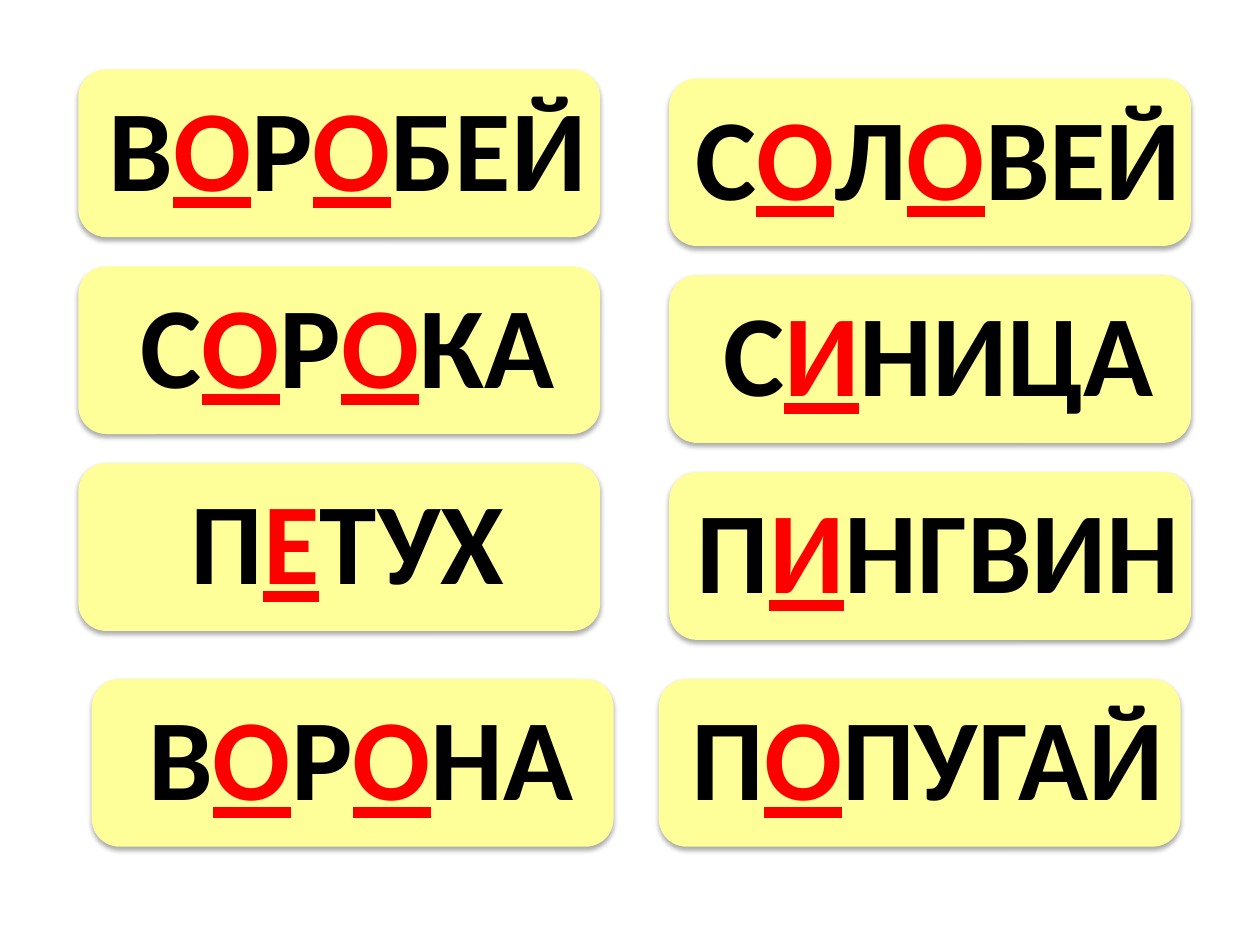
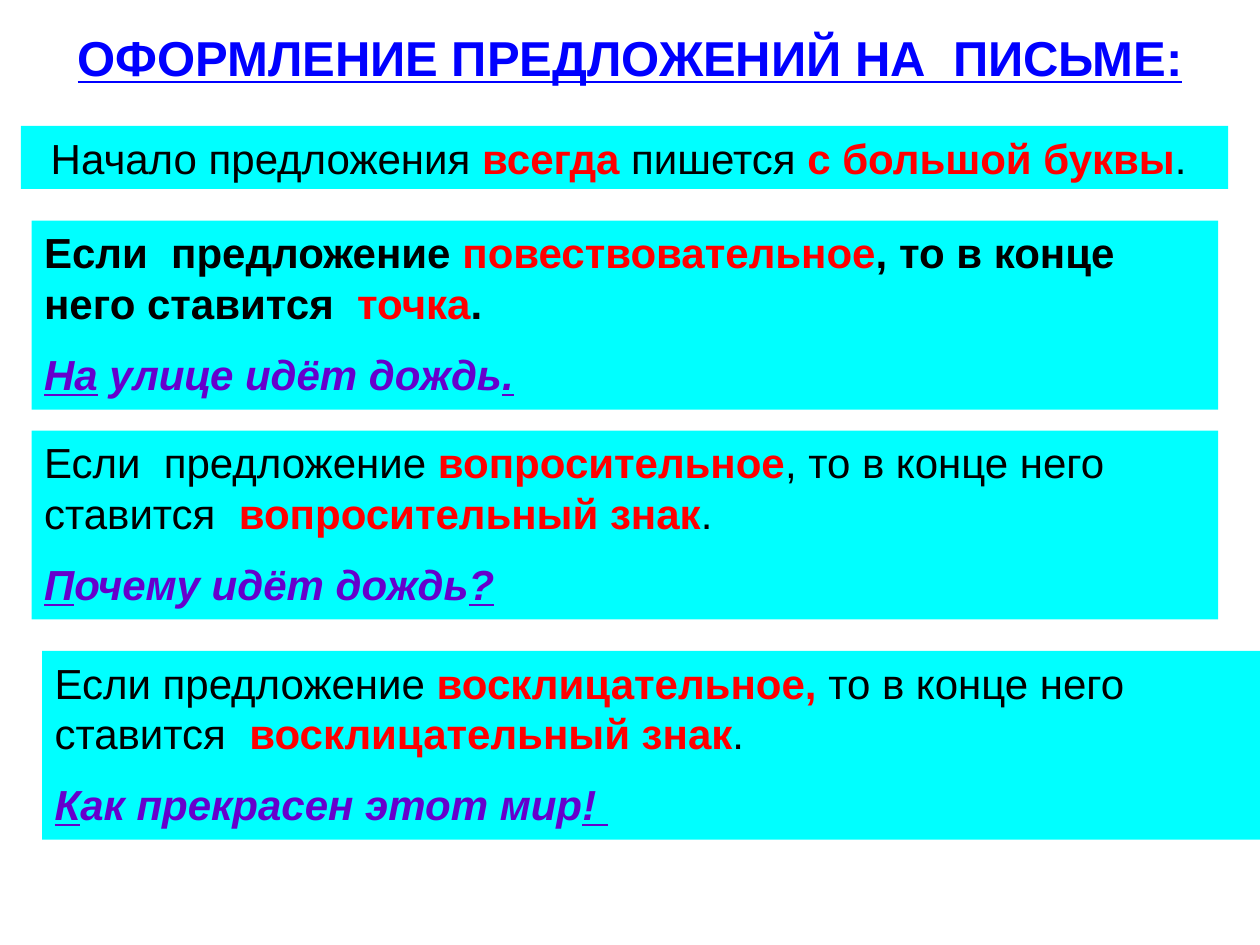
from dataclasses import dataclass, field
from typing import Any

from lxml.etree import SubElement
from pptx import Presentation
from pptx.dml.color import RGBColor
from pptx.enum.shapes import MSO_SHAPE
from pptx.enum.text import MSO_ANCHOR, MSO_AUTO_SIZE, PP_ALIGN
from pptx.oxml.ns import qn
from pptx.util import Cm, Pt


# Colours, fonts, sizes and run styles
def style(color: str, **more: Any) -> dict[str, Any]:
    return {"color": color, "bold": False, **more}


@dataclass(frozen=True)
class Theme:
    card: str = "FFFF99"
    band: str = "00FFFF"
    word_font: str = "Calibri"
    rule_font: str = "Arial"
    word_size: int = 66
    title_size: int = 28
    rule_size: int = 24
    styles: dict[str, dict[str, Any]] = field(default_factory=lambda: {
        "plain": style("000000"),
        "bold": style("000000", bold=True),
        "key": style("FF0000", bold=True),
        "vowel": style("FF0000", bold=True, underline=True),
        "mark": style("6600CC", bold=True, italic=True, underline=True),
        "sample": style("6600CC", bold=True, italic=True),
        "title": style("0000FF", bold=True, underline=True),
    })


THEME = Theme()
Line = list[tuple[str, str]]


@dataclass(frozen=True)
class Box:
    left: float
    top: float
    width: float
    height: float

    def place(self) -> tuple[Cm, Cm, Cm, Cm]:
        return Cm(self.left), Cm(self.top), Cm(self.width), Cm(self.height)


@dataclass(frozen=True)
class Card:
    left: float
    top: float
    word: str  # stressed-over vowels stand between asterisks


@dataclass(frozen=True)
class Rule:
    box: Box
    lines: list[Line]
    align: PP_ALIGN = PP_ALIGN.LEFT


# Word cards: two columns of three, and a last row set apart
COLUMNS = [
    (1.58, 1.4, ["В*О*Р*О*БЕЙ", "С*О*Р*О*КА", "П*Е*ТУХ"]),
    (13.49, 1.58, ["С*О*Л*О*ВЕЙ", "С*И*НИЦА", "П*И*НГВИН"]),
]
PITCH = 3.97
CARDS = [Card(left, top + row * PITCH, word)
         for left, top, words in COLUMNS for row, word in enumerate(words)]
CARDS += [Card(1.85, 13.69, "В*О*Р*О*НА"), Card(13.28, 13.69, "П*О*ПУГАЙ")]

# Sentence rules
TITLE = "ОФОРМЛЕНИЕ ПРЕДЛОЖЕНИЙ НА  ПИСЬМЕ:"
RULES = [
    Rule(Box(0.42, 2.54, 24.34, 1.27), [
        [("Начало предложения ", "plain"), ("всегда", "key"),
         (" пишется ", "plain"), ("с большой буквы", "key"), (". ", "plain")],
    ], PP_ALIGN.CENTER),
    Rule(Box(0.64, 4.45, 23.92, 3.81), [
        [("Если  предложение ", "bold"), ("повествовательное", "key"),
         (", то в конце него ставится  ", "bold"), ("точка", "key"), (".", "bold")],
        [("На", "mark"), (" улице идёт дождь", "sample"), (".", "mark")],
    ]),
    Rule(Box(0.64, 8.68, 23.92, 3.81), [
        [("Если  предложение ", "plain"), ("вопросительное", "key"),
         (", то в конце него ставится  ", "plain"),
         ("вопросительный знак", "key"), (".", "plain")],
        [("П", "mark"), ("очему идёт дождь", "sample"), ("?", "mark")],
    ]),
    Rule(Box(0.85, 13.12, 24.55, 3.81), [
        [("Если предложение ", "plain"), ("восклицательное,", "key"),
         (" то в конце него ставится  ", "plain"),
         ("восклицательный знак", "key"), (".", "plain")],
        [("К", "mark"), ("ак прекрасен этот мир", "sample"), ("! ", "mark")],
    ]),
]


def write(shape: Any, lines: list[Line], font: str, size: int, align: PP_ALIGN,
          fit: MSO_AUTO_SIZE = MSO_AUTO_SIZE.SHAPE_TO_FIT_TEXT) -> None:
    frame = shape.text_frame
    form = {"word_wrap": True, "auto_size": fit, "vertical_anchor": MSO_ANCHOR.TOP}
    for name, value in form.items():
        setattr(frame, name, value)
    for row, line in enumerate(lines):
        para = frame.add_paragraph() if row else frame.paragraphs[0]
        para.alignment = align
        if row:
            para.space_before = Pt(size / 2)
        for text, kind in line:
            run = para.add_run()
            run.text = text
            look = {**THEME.styles[kind], "name": font, "size": Pt(size)}
            run.font.color.rgb = RGBColor.from_string(look.pop("color"))
            for name, value in look.items():
                setattr(run.font, name, value)


def panel(shapes: Any, kind: MSO_SHAPE, box: Box, color: str) -> Any:
    shape = shapes.add_shape(kind, *box.place())
    shape.shadow.inherit = False
    shape.fill.solid()
    shape.fill.fore_color.rgb = RGBColor.from_string(color)
    shape.line.fill.background()
    return shape


def shade(shape: Any) -> None:
    """Give the shape a soft shadow straight below it."""
    effects = shape._element.spPr.find(qn("a:effectLst"))
    outer = SubElement(effects, qn("a:outerShdw"), blurRad=str(Pt(3.1)),
                       dist=str(Pt(1.8)), dir="5400000", rotWithShape="0")
    color = SubElement(outer, qn("a:srgbClr"), val="000000")
    SubElement(color, qn("a:alpha"), val="35000")


def draw_card(slide: Any, card: Card) -> None:
    group = slide.shapes.add_group_shape()
    base = Box(card.left, card.top, 10.52, 3.38)
    shade(panel(group.shapes, MSO_SHAPE.FLOWCHART_ALTERNATE_PROCESS, base, THEME.card))
    label = group.shapes.add_textbox(*Box(card.left, card.top, 10.85, 3.07).place())
    line = [(part, "vowel" if spot % 2 else "bold")
            for spot, part in enumerate(card.word.split("*"))]
    write(label, [line], THEME.word_font, THEME.word_size, PP_ALIGN.CENTER)


def draw_rule(slide: Any, rule: Rule) -> None:
    shape = panel(slide.shapes, MSO_SHAPE.RECTANGLE, rule.box, THEME.band)
    write(shape, rule.lines, THEME.rule_font, THEME.rule_size, rule.align)


def draw_title(slide: Any, text: str) -> None:
    title = slide.shapes.title
    spot = zip(("left", "top", "width", "height"), Box(0, 0.43, 25.4, 1.45).place())
    for name, value in spot:
        setattr(title, name, value)
    write(title, [[(text, "title")]], THEME.rule_font, THEME.title_size,
          PP_ALIGN.CENTER, MSO_AUTO_SIZE.NONE)


def main() -> None:
    deck = Presentation()
    deck.slide_width, deck.slide_height = Cm(25.4), Cm(19.05)

    # Bird names
    birds = deck.slides.add_slide(deck.slide_layouts.get_by_name("Blank"))
    for card in CARDS:
        draw_card(birds, card)

    # Sentence endings
    page = deck.slides.add_slide(deck.slide_layouts.get_by_name("Title Only"))
    draw_title(page, TITLE)
    for rule in RULES:
        draw_rule(page, rule)

    deck.save("out.pptx")


if __name__ == "__main__":
    main()
